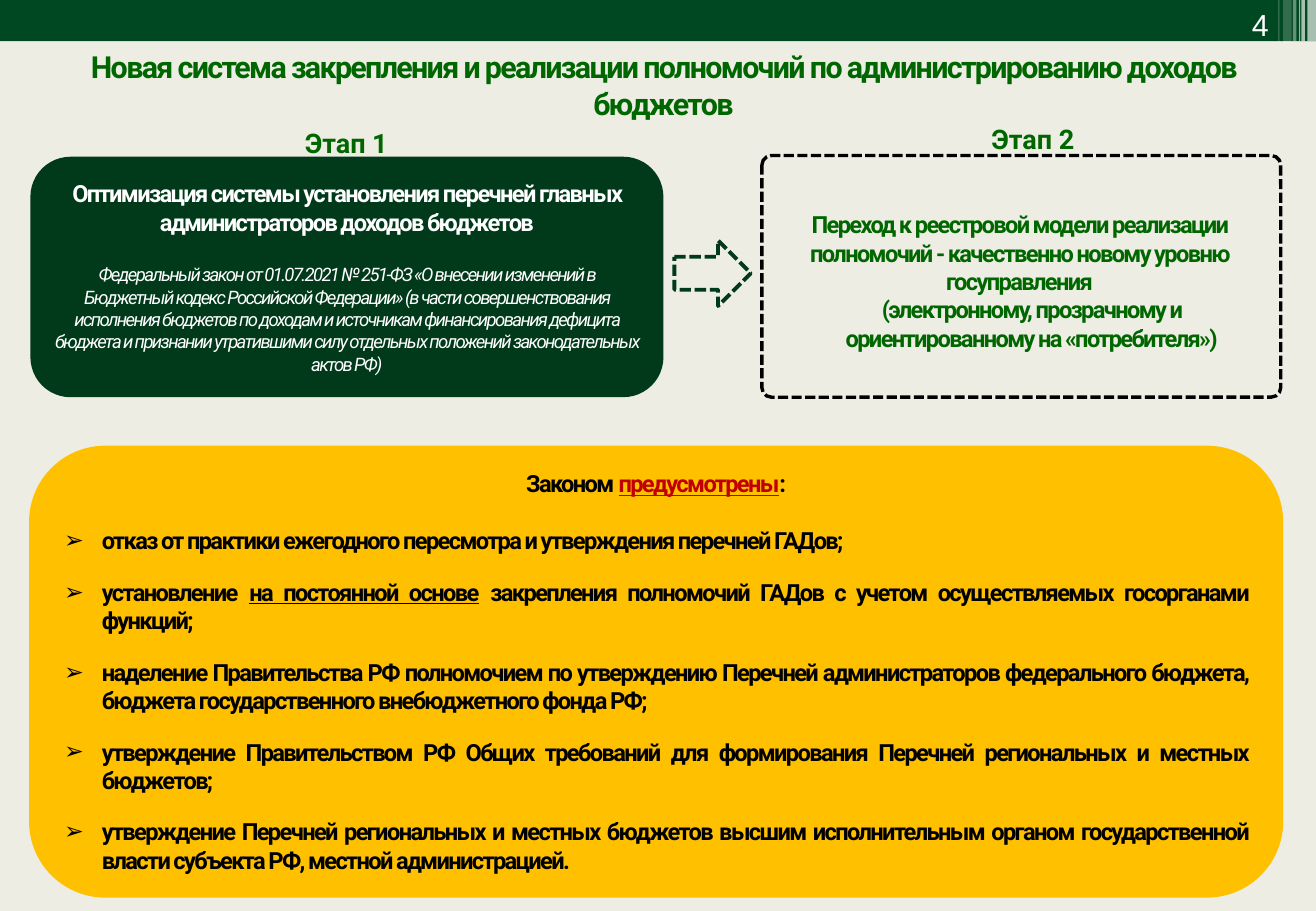
from dataclasses import dataclass
from typing import Optional

from lxml.etree import SubElement
from pptx import Presentation
from pptx.dml.color import RGBColor
from pptx.enum.dml import MSO_LINE
from pptx.enum.shapes import MSO_SHAPE
from pptx.enum.text import MSO_ANCHOR, PP_ALIGN
from pptx.oxml.ns import qn
from pptx.util import Inches, Pt


@dataclass(frozen=True)
class Theme:
    paper: str = "EDEDE3"
    header: str = "004821"
    dark: str = "003A1A"
    green: str = "006600"
    gold: str = "FFC000"
    red: str = "C00000"
    black: str = "000000"
    white: str = "FFFFFF"
    font: str = "Roboto"
    plain: str = "Arial"
    title: float = 18
    stage: float = 16
    body: float = 14
    note: float = 11


THEME = Theme()


@dataclass(frozen=True)
class Box:
    left: float
    top: float
    width: float
    height: float


@dataclass(frozen=True)
class Piece:
    text: str
    color: str
    line: bool = False


@dataclass(frozen=True)
class Para:
    pieces: list[Piece]
    size: float = THEME.body
    bold: bool = True
    slant: bool = False
    tight: bool = True
    font: str = THEME.font
    align: PP_ALIGN = PP_ALIGN.CENTER
    before: float = 0
    indent: float = 0
    bullet: str = ""


@dataclass(frozen=True)
class Stripe:
    left: float
    width: float
    height: float
    alpha: int


@dataclass(frozen=True)
class Label:
    box: Box
    paras: list[Para]
    anchor: MSO_ANCHOR = MSO_ANCHOR.TOP


def add_form(slide, kind: MSO_SHAPE, box: Box, fill: str = "", line: str = "",
             width: float = 1, dash: Optional[MSO_LINE] = None):
    form = slide.shapes.add_shape(kind, Inches(box.left), Inches(box.top),
                                  Inches(box.width), Inches(box.height))
    form.shadow.inherit = False
    if fill:
        form.fill.solid()
        form.fill.fore_color.rgb = RGBColor.from_string(fill)
    else:
        form.fill.background()
    if line:
        form.line.color.rgb = RGBColor.from_string(line)
        form.line.width = Pt(width)
        form.line.dash_style = dash
    else:
        form.line.fill.background()
    return form


def add_stripe(slide, stripe: Stripe) -> None:
    box = Box(stripe.left, 0, stripe.width, stripe.height)
    form = add_form(slide, MSO_SHAPE.RECTANGLE, box, THEME.white)
    color = form.fill._xPr.find(qn("a:solidFill"))[0]
    SubElement(color, qn("a:alpha")).set("val", str(stripe.alpha * 1000))


def write(frame, paras: list[Para], anchor: MSO_ANCHOR) -> None:
    frame.word_wrap = True
    frame.vertical_anchor = anchor
    for index, para in enumerate(paras):
        line = frame.add_paragraph() if index else frame.paragraphs[0]
        line.alignment = para.align
        line.space_before = Pt(para.before)
        props = line._p.get_or_add_pPr()
        if para.indent:
            props.set("marL", str(Inches(para.indent)))
        if para.bullet:
            props.set("indent", str(-Inches(para.indent)))
            SubElement(props, qn("a:buFont")).set("typeface", THEME.plain)
            SubElement(props, qn("a:buChar")).set("char", para.bullet)
        for piece in para.pieces:
            run = line.add_run()
            run.text = piece.text
            font = run.font
            font.name, font.size = para.font, Pt(para.size)
            font.bold, font.italic = para.bold, para.slant
            font.underline = piece.line
            font.color.rgb = RGBColor.from_string(piece.color)
            if para.tight:
                run._r.get_or_add_rPr().set("spc", "-100")


def add_label(slide, label: Label) -> None:
    box = label.box
    form = slide.shapes.add_textbox(Inches(box.left), Inches(box.top),
                                    Inches(box.width), Inches(box.height))
    write(form.text_frame, label.paras, label.anchor)


def point(*pieces: Piece, before: float = 13.7) -> Para:
    return Para(list(pieces), align=PP_ALIGN.JUSTIFY, before=before, indent=0.31, bullet="➢")


def ink(text: str, line: bool = False) -> Piece:
    return Piece(text, THEME.black, line)


def leaf(text: str) -> list[Piece]:
    return [Piece(text, THEME.green)]


def snow(text: str) -> list[Piece]:
    return [Piece(text, THEME.white)]


STRIPES = [
    Stripe(10.76, 0.07, 0.34, 65),
    Stripe(10.71, 0.03, 0.34, 65),
    Stripe(10.69, 0.01, 0.34, 60),
    Stripe(10.64, 0.03, 0.34, 40),
    Stripe(10.56, 0.07, 0.36, 20),
    Stripe(10.52, 0.01, 0.36, 30),
]

LABELS = [
    Label(Box(9.71, 0, 0.83, 0.4),
          [Para(snow("4"), THEME.title, bold=False, tight=False, font=THEME.plain,
                align=PP_ALIGN.RIGHT)], MSO_ANCHOR.MIDDLE),
    Label(Box(0.38, 0.35, 10.16, 0.71),
          [Para(leaf("Новая система закрепления и реализации полномочий по "
                     "администрированию доходов бюджетов"), THEME.title)]),
    Label(Box(1.71, 0.99, 2.28, 0.37), [Para(leaf("Этап 1"), THEME.stage, tight=False)]),
    Label(Box(7.36, 0.96, 2.28, 0.37), [Para(leaf("Этап 2"), THEME.stage, tight=False)]),
    Label(Box(6.27, 1.68, 4.24, 1.28),
          [Para(leaf("Переход к реестровой модели реализации полномочий - "
                     "качественно новому уровню госуправления")),
           Para(leaf("(электронному, прозрачному и ориентированному на «потребителя»)"),
                indent=0.2)]),
]

REFORM = [
    Para(snow("Оптимизация системы установления перечней главных "
              "администраторов доходов бюджетов")),
    Para(snow("Федеральный закон от 01.07.2021 № 251-ФЗ «О внесении изменений в Бюджетный "
              "кодекс Российской Федерации» (в части совершенствования исполнения бюджетов "
              "по доходам и источникам финансирования дефицита бюджета и признании "
              "утратившими силу отдельных положений законодательных актов РФ)"),
         THEME.note, bold=False, slant=True, before=16.4),
]

LAW = [
    Para([ink("Законом "), Piece("предусмотрены", THEME.red, True), ink(":")]),
    point(ink("отказ от практики ежегодного пересмотра и утверждения перечней ГАДов;"),
          before=17),
    point(ink("установление "), ink("на постоянной основе", True),
          ink(" закрепления полномочий ГАДов с учетом осуществляемых госорганами функций;")),
    point(ink("наделение Правительства РФ полномочием по утверждению Перечней администраторов "
              "федерального бюджета, бюджета государственного внебюджетного фонда РФ;")),
    point(ink("утверждение Правительством РФ Общих требований для формирования Перечней "
              "региональных и местных бюджетов;")),
    point(ink("утверждение Перечней региональных и местных бюджетов высшим исполнительным "
              "органом государственной власти субъекта РФ, местной администрацией.")),
]


def main() -> None:
    deck = Presentation()
    deck.slide_width, deck.slide_height = Inches(10.83), Inches(7.5)
    slide = deck.slides.add_slide(deck.slide_layouts[6])
    slide.background.fill.solid()
    slide.background.fill.fore_color.rgb = RGBColor.from_string(THEME.paper)

    # Header band
    add_form(slide, MSO_SHAPE.RECTANGLE, Box(0, 0, 10.83, 0.34), THEME.header)
    for stripe in STRIPES:
        add_stripe(slide, stripe)

    # Two stages and the arrow between them
    round_box = MSO_SHAPE.ROUNDED_RECTANGLE
    first = add_form(slide, round_box, Box(0.25, 1.29, 5.21, 1.98), THEME.dark)
    write(first.text_frame, REFORM, MSO_ANCHOR.MIDDLE)
    second = add_form(slide, round_box, Box(6.27, 1.28, 4.27, 1.99),
                      line=THEME.black, width=2, dash=MSO_LINE.SQUARE_DOT)
    second.adjustments[0] = 0.04
    add_form(slide, MSO_SHAPE.RIGHT_ARROW, Box(5.55, 1.98, 0.63, 0.54),
             line=THEME.dark, width=2.25, dash=MSO_LINE.SQUARE_DOT)

    # What the law provides
    law = add_form(slide, round_box, Box(0.25, 3.68, 10.3, 3.7), THEME.gold, THEME.gold, 1.5)
    write(law.text_frame, LAW, MSO_ANCHOR.MIDDLE)

    # Title, page number and stage texts
    for label in LABELS:
        add_label(slide, label)

    deck.save("out.pptx")


if __name__ == "__main__":
    main()
